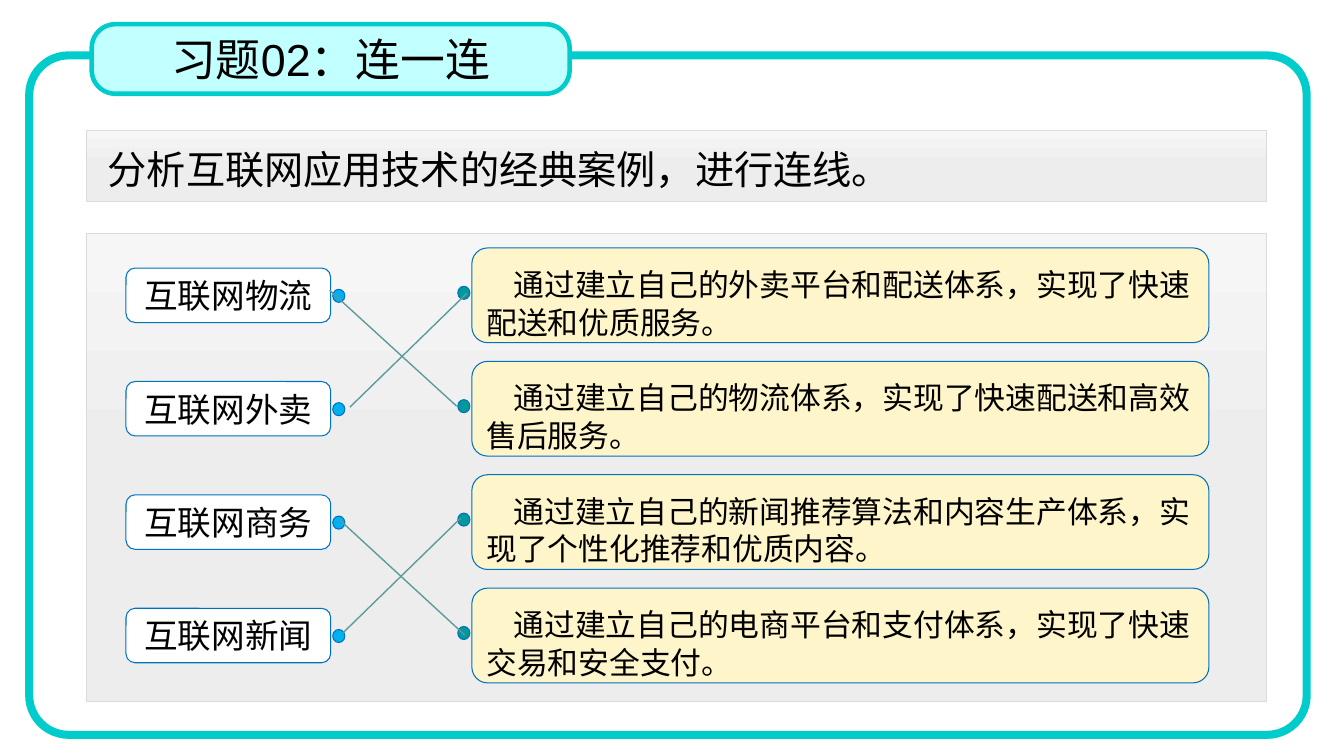
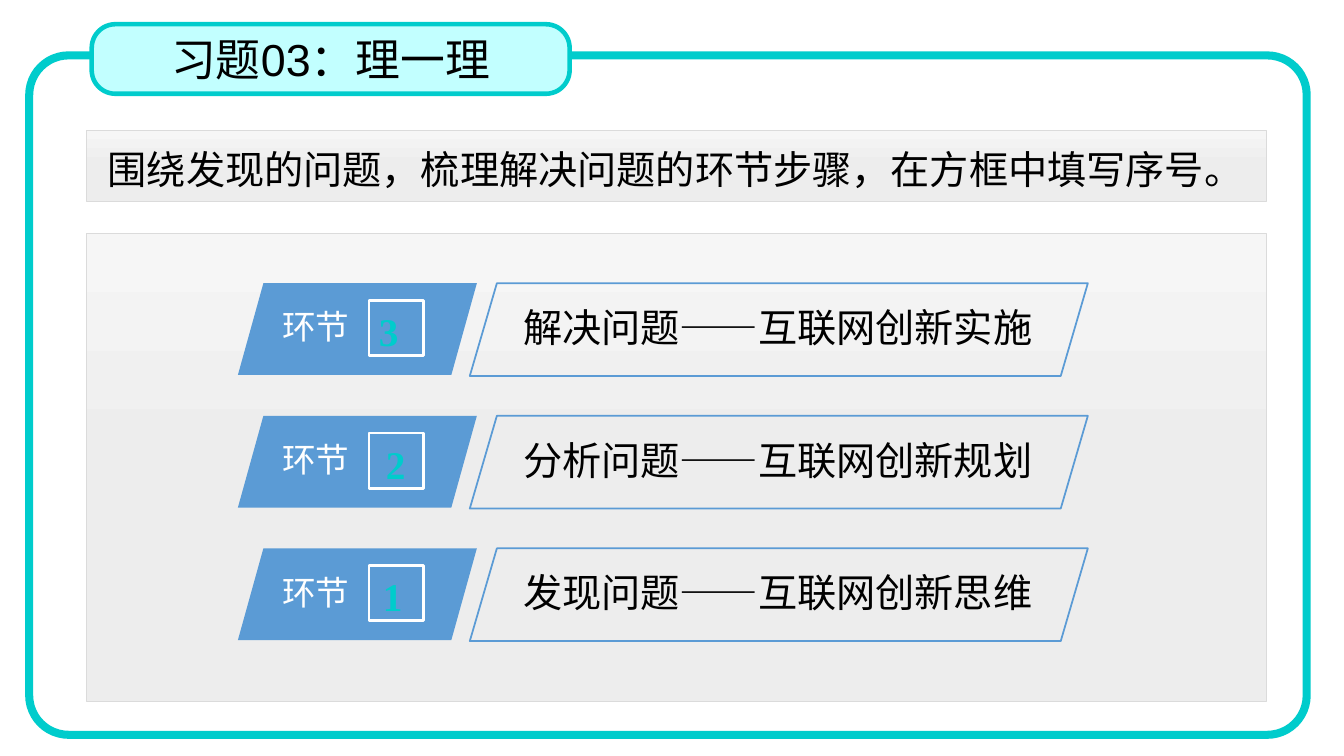
import copy

import lxml.etree
import pptx
import pptx.dml.color
import pptx.enum.shapes
import pptx.enum.text
import pptx.oxml.ns
import pptx.util

Inches, Pt = pptx.util.Inches, pptx.util.Pt
RGBColor = pptx.dml.color.RGBColor
Shape = pptx.enum.shapes.MSO_SHAPE
Align = pptx.enum.text.PP_ALIGN
Anchor = pptx.enum.text.MSO_ANCHOR
qn = pptx.oxml.ns.qn

BLACK = RGBColor(0x00, 0x00, 0x00)
WHITE = RGBColor(0xFF, 0xFF, 0xFF)
TURQUOISE = RGBColor(0x00, 0xCC, 0xCC)
PALE_CYAN = RGBColor(0xC2, 0xFF, 0xFF)
PANEL_LINE = RGBColor(0xDB, 0xDB, 0xDB)
PANEL_STOPS = [(0, RGBColor(0xF6, 0xF6, 0xF6)),
               (0.5, RGBColor(0xED, 0xED, 0xED)),
               (1, RGBColor(0xEB, 0xEB, 0xEB))]
CREAM = RGBColor(0xFF, 0xF5, 0xCA)
OUTLINE_BLUE = RGBColor(0x00, 0x70, 0xC0)
LABEL_DOT = RGBColor(0x00, 0xB0, 0xF0)
ANSWER_DOT = RGBColor(0x00, 0x99, 0x99)
MATCH_LINE = RGBColor(0x5D, 0x9B, 0x9B)
STEP_BLUE = RGBColor(0x5B, 0x9B, 0xD5)
SANS, LATIN, SERIF = "Noto Sans CJK SC", "Arial", "Times New Roman"


def add_box(page, kind, place, fill=None, line=None, width=0.75, adjust=None):
    box = page.shapes.add_shape(kind, *map(Inches, place))
    box.shadow.inherit = False
    if adjust is not None:
        box.adjustments[0] = adjust
    if fill is None:
        box.fill.background()
    else:
        box.fill.solid()
        box.fill.fore_color.rgb = fill
    if line is None:
        box.line.fill.background()
    else:
        box.line.color.rgb = line
        box.line.width = Pt(width)
    return box


def write(box, text, size, font=SANS, color=BLACK, align=Align.LEFT,
          anchor=Anchor.TOP, grow=False):
    frame = box.text_frame
    frame.word_wrap = True
    frame.vertical_anchor = anchor
    if grow:
        frame.auto_size = pptx.enum.text.MSO_AUTO_SIZE.SHAPE_TO_FIT_TEXT
    para = frame.paragraphs[0]
    para.text = text
    para.alignment = align
    para.font.size = Pt(size)
    para.font.name = font
    para.font.color.rgb = color
    # East Asian glyphs take their own typeface
    properties = para._p.pPr.find(qn("a:defRPr"))
    east_asian = lxml.etree.SubElement(properties, qn("a:ea"))
    east_asian.set("typeface", SANS)
    return para


deck = pptx.Presentation()
deck.slide_width, deck.slide_height = Inches(13.33), Inches(7.5)

# Shared frame, title and task line
pages = []
for title, task in [
    ("习题02：连一连", "分析互联网应用技术的经典案例，进行连线。"),
    ("习题03：理一理", "围绕发现的问题，梳理解决问题的环节步骤，在方框中填写序号。"),
]:
    page = deck.slides.add_slide(deck.slide_layouts[6])
    pages.append(page)
    for top, height in [(2.32, 4.64), (1.29, 0.71)]:
        panel = add_box(page, Shape.RECTANGLE, (0.86, top, 11.7, height),
                        line=PANEL_LINE, width=0.5)
        panel.fill.gradient()
        panel.fill.gradient_angle = 270
        stop_list = panel._element.spPr.find(".//" + qn("a:gsLst"))
        stop_list.append(copy.deepcopy(stop_list[0]))
        for stop, (position, color) in zip(panel.fill.gradient_stops, PANEL_STOPS):
            stop.position = position
            stop.color.rgb = color
    add_box(page, Shape.ROUNDED_RECTANGLE, (0.29, 0.55, 12.67, 6.74),
            line=TURQUOISE, width=5.75, adjust=0.058)
    tab = add_box(page, Shape.ROUNDED_RECTANGLE, (0.91, 0.24, 4.74, 0.69),
                  PALE_CYAN, TURQUOISE, 3.25, 0.341)
    write(tab, title, 32, LATIN, align=Align.CENTER, anchor=Anchor.MIDDLE)
    task_box = page.shapes.add_textbox(*map(Inches, (0.97, 1.16, 11.59, 0.81)))
    write(task_box, task, 28, grow=True).line_spacing = 1.5

matching, ordering = pages

# Matching: labels on the left, cases on the right
cases = [
    ("互联网物流", "通过建立自己的外卖平台和配送体系，实现了快速配送和优质服务。"),
    ("互联网外卖", "通过建立自己的物流体系，实现了快速配送和高效售后服务。"),
    ("互联网商务", "通过建立自己的新闻推荐算法和内容生产体系，实现了个性化推荐和优质内容。"),
    ("互联网新闻", "通过建立自己的电商平台和支付体系，实现了快速交易和安全支付。"),
]
for row, (label, answer) in enumerate(cases):
    offset = row * 1.125
    label_box = add_box(matching, Shape.ROUNDED_RECTANGLE,
                        (1.25, 2.66 + offset, 2.03, 0.54), WHITE, OUTLINE_BLUE)
    label_box.text_frame.margin_top = label_box.text_frame.margin_bottom = 0
    write(label_box, label, 24, align=Align.CENTER, anchor=Anchor.MIDDLE)
    answer_box = add_box(matching, Shape.ROUNDED_RECTANGLE,
                         (4.68, 2.46 + offset, 7.31, 0.94), CREAM, OUTLINE_BLUE)
    answer_box.text_frame.margin_top = Inches(0.12)
    para = write(answer_box, answer, 22)
    para.line_spacing = Pt(27)
    para._p.pPr.set("indent", str(Inches(0.27)))
    for left, top, color in [(3.3, 2.87, LABEL_DOT), (4.54, 2.84, ANSWER_DOT)]:
        add_box(matching, Shape.OVAL, (left, top + offset, 0.12, 0.13),
                color, OUTLINE_BLUE)

# Matching: lines between the dots
for ends in [(3.27, 2.88, 4.53, 4.03), (3.36, 5.15, 4.61, 6.3),
             (3.47, 4.04, 4.63, 2.91), (3.4, 6.28, 4.57, 5.14)]:
    link = matching.shapes.add_connector(
        pptx.enum.shapes.MSO_CONNECTOR.STRAIGHT, *map(Inches, ends))
    link.line.color.rgb = MATCH_LINE
    link.line.width = Pt(1)
    lxml.etree.SubElement(link._element.spPr, qn("a:effectLst"))

# Ordering: one step per row, with its number in the square
steps = [("3", 3.66, "解决问题——互联网创新实施"),
         ("2", 3.73, "分析问题——互联网创新规划"),
         ("1", 3.7, "发现问题——互联网创新思维")]
for row, (number, number_left, step) in enumerate(steps):
    top = 2.81 + row * 1.315
    step_box = ordering.shapes.add_textbox(
        *map(Inches, (5.12, top + 0.16, 5.3, 0.63)))
    frame = step_box.text_frame
    frame.margin_left = frame.margin_right = Inches(0.07)
    frame.margin_top = frame.margin_bottom = Inches(0.04)
    write(step_box, step, 28)
    add_box(ordering, Shape.PARALLELOGRAM, (4.66, top, 6.13, 0.92),
            line=STEP_BLUE, width=1.25, adjust=0.292)
    add_box(ordering, Shape.PARALLELOGRAM, (2.36, top, 2.37, 0.91),
            STEP_BLUE, adjust=0.278)
    stage_box = ordering.shapes.add_textbox(
        *map(Inches, (2.7, top + 0.18, 2.25, 0.5)))
    write(stage_box, "环节", 24, LATIN, WHITE, grow=True)
    add_box(ordering, Shape.RECTANGLE, (3.66, top + 0.17, 0.54, 0.55),
            line=WHITE, width=2)
    number_box = ordering.shapes.add_textbox(
        *map(Inches, (number_left, top + 0.19, 0.85, 0.53)))
    write(number_box, number, 28, SERIF, TURQUOISE).font.bold = True

deck.save("out.pptx")
